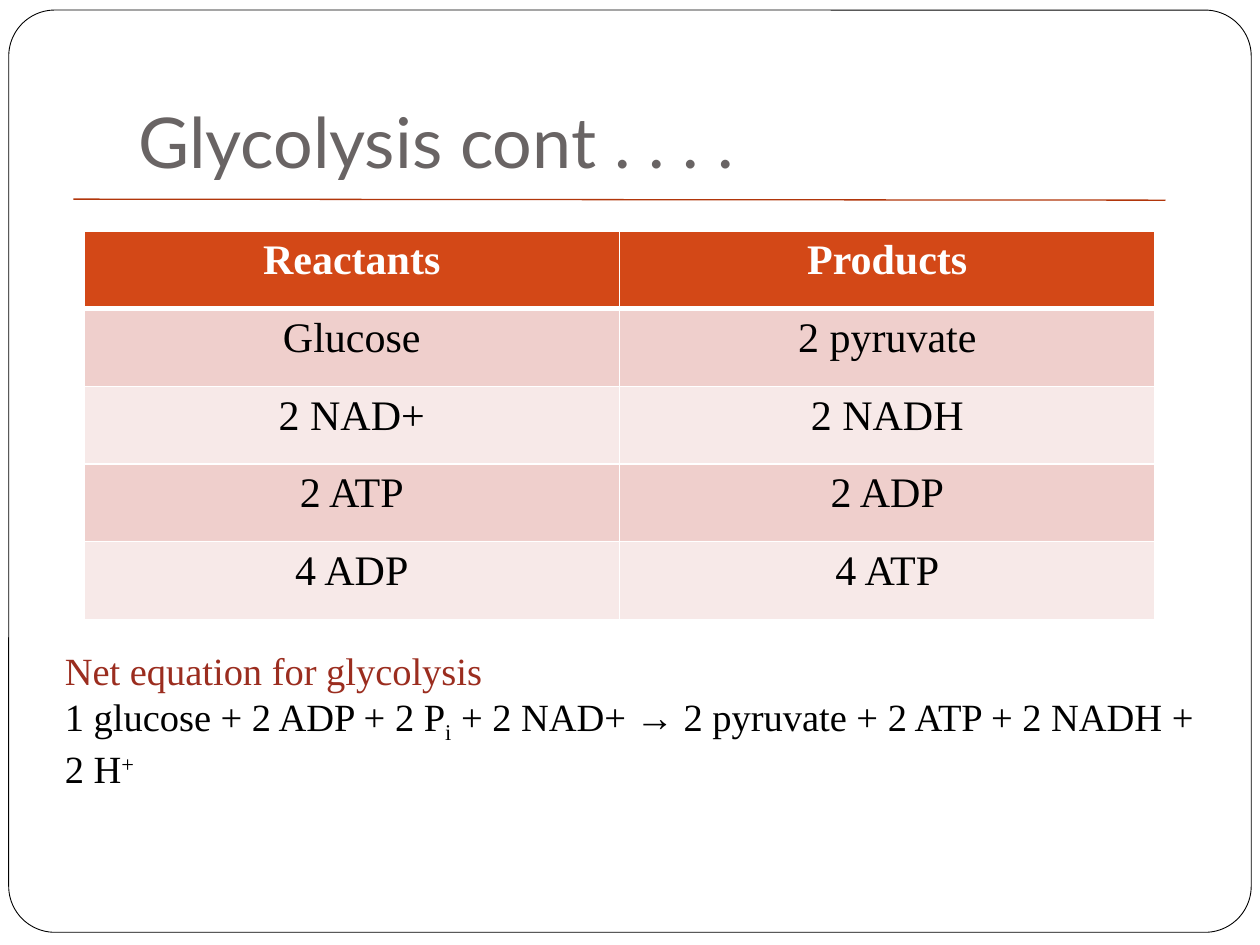
from dataclasses import dataclass
from typing import NamedTuple

from lxml.etree import SubElement
from pptx import Presentation
from pptx.dml.color import RGBColor
from pptx.enum.shapes import MSO_CONNECTOR as Connector, MSO_SHAPE as Preset
from pptx.enum.text import MSO_ANCHOR as Anchor, MSO_AUTO_SIZE as AutoSize, PP_ALIGN as Align
from pptx.oxml import parse_xml
from pptx.oxml.ns import nsdecls, qn
from pptx.util import Pt


@dataclass(frozen=True)
class Theme:
    heading_font: str = "Lato"
    body_font: str = "Times New Roman"
    title_size: float = 40
    table_size: float = 24
    equation_size: float = 22
    paper: str = "FFFFFF"
    ink: str = "000000"
    title: str = "696464"
    rule: str = "B1360B"
    accent: str = "9B2D1F"
    header: str = "D34817"
    bands: tuple[str, str] = ("EFCFCC", "F7E9E8")


class Box(NamedTuple):
    left: float
    top: float
    width: float
    height: float

    def in_points(self) -> list[Pt]:
        return [Pt(length) for length in self]


class Reaction(NamedTuple):
    reactant: str
    product: str


class Piece(NamedTuple):
    text: str
    baseline: int = 0  # percent of the type size


THEME = Theme()
FRAME = Box(5, 5.76, 710, 527)
TITLE = Box(72, 21.6, 612, 90)
TABLE = Box(48, 132, 612, 222)
EQUATION = Box(30, 366, 672, 60.5)

REACTIONS = [
    Reaction("Reactants", "Products"),
    Reaction("Glucose", "2 pyruvate"),
    Reaction("2 NAD+", "2 NADH"),
    Reaction("2 ATP", "2 ADP"),
    Reaction("4 ADP", "4 ATP"),
]
NET_EQUATION = [
    Piece("1 glucose + 2 ADP + 2 P"),
    Piece("i", -25),
    Piece(" + 2 NAD+ → 2 pyruvate + 2 ATP + 2 NADH + 2 H"),
    Piece("+", 30),
]


def style(font, name: str, size: float, color: str, bold: bool = False) -> None:
    font.name, font.size, font.bold = name, Pt(size), bold
    font.color.rgb = RGBColor.from_string(color)


def draw_frame(slide) -> None:
    frame = slide.shapes.add_shape(Preset.ROUNDED_RECTANGLE, *FRAME.in_points())
    frame.adjustments[0] = 0.05
    frame.shadow.inherit = False
    frame.fill.solid()
    frame.fill.fore_color.rgb = RGBColor.from_string(THEME.paper)
    frame.line.color.rgb = RGBColor.from_string(THEME.ink)
    frame.line.width = Pt(0.5)


def draw_title(slide, text: str) -> None:
    title = slide.shapes.add_textbox(*TITLE.in_points()).text_frame
    title.word_wrap = True
    title.vertical_anchor = Anchor.BOTTOM
    title.margin_bottom = Pt(7.2)
    title.text = text
    style(title.paragraphs[0].runs[0].font, THEME.heading_font, THEME.title_size, THEME.title)


def draw_rule(slide) -> None:
    rule = slide.shapes.add_connector(Connector.STRAIGHT, Pt(42), Pt(113.8), Pt(666), Pt(114.4))
    rule.line.color.rgb = RGBColor.from_string(THEME.rule)
    rule.line.width = Pt(0.75)
    SubElement(rule._element.spPr, qn("a:effectLst"))


def set_borders(cell, top: float, bottom: float) -> None:
    widths = {"lnL": 1, "lnR": 1, "lnT": top, "lnB": bottom}
    properties = cell._tc.get_or_add_tcPr()
    for position, (side, width) in enumerate(widths.items()):
        properties.insert(position, parse_xml(
            f'<a:{side} {nsdecls("a")} w="{Pt(width)}"><a:solidFill>'
            f'<a:srgbClr val="{THEME.paper}"/></a:solidFill></a:{side}>'))


def draw_table(slide, reactions: list[Reaction]) -> None:
    table = slide.shapes.add_table(len(reactions), 2, *TABLE.in_points()).table
    for row, reaction in enumerate(reactions):
        is_header = row == 0
        fill = THEME.header if is_header else THEME.bands[(row - 1) % 2]
        color = THEME.paper if is_header else THEME.ink
        for column, substance in enumerate(reaction):
            cell = table.cell(row, column)
            cell.fill.solid()
            cell.fill.fore_color.rgb = RGBColor.from_string(fill)
            set_borders(cell, top=3 if row == 1 else 1, bottom=3 if is_header else 1)
            paragraph = cell.text_frame.paragraphs[0]
            paragraph.text = substance
            paragraph.alignment = Align.CENTER
            style(paragraph.runs[0].font, THEME.body_font, THEME.table_size, color, is_header)


def draw_equation(slide, heading: str, pieces: list[Piece]) -> None:
    frame = slide.shapes.add_textbox(*EQUATION.in_points()).text_frame
    frame.word_wrap = True
    frame.auto_size = AutoSize.SHAPE_TO_FIT_TEXT
    frame.text = heading
    style(frame.paragraphs[0].runs[0].font, THEME.body_font, THEME.equation_size, THEME.accent)
    equation = frame.add_paragraph()
    for piece in pieces:
        run = equation.add_run()
        run.text = piece.text
        style(run.font, THEME.body_font, THEME.equation_size, THEME.ink)
        if piece.baseline:
            run._r.get_or_add_rPr().set("baseline", str(piece.baseline * 1000))


def main() -> None:
    deck = Presentation()
    deck.slide_width, deck.slide_height = Pt(720), Pt(540)
    slide = deck.slides.add_slide(deck.slide_layouts[6])

    # Page frame and heading
    draw_frame(slide)
    draw_title(slide, "Glycolysis cont . . . .")
    draw_rule(slide)

    # Reactants, products and the net result
    draw_table(slide, REACTIONS)
    draw_equation(slide, "Net equation for glycolysis", NET_EQUATION)

    deck.save("out.pptx")


if __name__ == "__main__":
    main()
